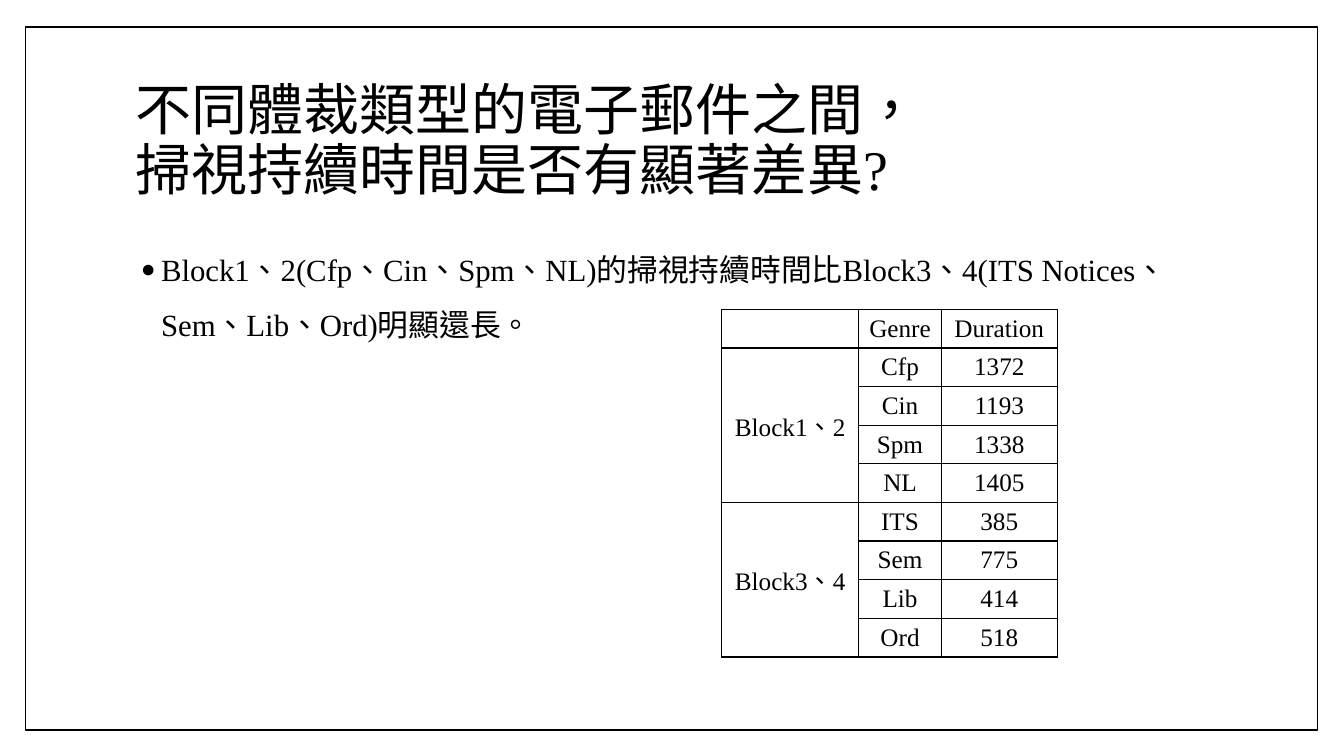
from lxml.etree import SubElement
from pptx import Presentation
from pptx.dml.color import RGBColor
from pptx.enum.lang import MSO_LANGUAGE_ID
from pptx.enum.shapes import MSO_SHAPE
from pptx.enum.text import MSO_ANCHOR, PP_ALIGN
from pptx.oxml.ns import qn
from pptx.util import Pt

FONT = "Times New Roman"
BLACK = "000000"
WHITE = "FFFFFF"
BLOCKS = {
    "Block1、2": [("Cfp", 1372), ("Cin", 1193), ("Spm", 1338), ("NL", 1405)],
    "Block3、4": [("ITS", 385), ("Sem", 775), ("Lib", 414), ("Ord", 518)],
}


def color(value):
    return RGBColor.from_string(value)


def write_text(frame, text, size, align=PP_ALIGN.LEFT, line_spacing=1.0, space_before=0):
    frame.word_wrap = True
    paragraph = frame.paragraphs[0]
    paragraph.text = text
    paragraph.alignment = align
    paragraph.line_spacing = line_spacing
    paragraph.space_before = Pt(space_before)
    for run in paragraph.runs:
        run.font.name = FONT
        run.font.size = Pt(size)
        run.font.color.rgb = color(BLACK)
        run.font.language_id = MSO_LANGUAGE_ID.TRADITIONAL_CHINESE
    return paragraph


def add_bullet(paragraph, character, left, hanging, percent):
    properties = paragraph._p.get_or_add_pPr()
    properties.set("marL", str(Pt(left)))
    properties.set("indent", str(-Pt(hanging)))
    bullet_color = SubElement(properties, qn("a:buClr"))
    SubElement(bullet_color, qn("a:srgbClr"), val=BLACK)
    SubElement(properties, qn("a:buSzPct"), val=str(percent * 1000))
    SubElement(properties, qn("a:buFont"), typeface=FONT)
    SubElement(properties, qn("a:buChar"), char=character)


def add_frame(slide, left, top, width, height):
    shape = slide.shapes.add_shape(
        MSO_SHAPE.RECTANGLE, Pt(left), Pt(top), Pt(width), Pt(height)
    )
    shape.shadow.inherit = False
    shape.fill.solid()
    shape.fill.fore_color.rgb = color(WHITE)
    shape.line.color.rgb = color(BLACK)
    shape.line.width = Pt(1)


def add_title(slide, left, top, width, height):
    box = slide.shapes.add_textbox(Pt(left), Pt(top), Pt(width), Pt(height))
    box.text_frame.vertical_anchor = MSO_ANCHOR.MIDDLE
    title = "不同體裁類型的電子郵件之間，\v掃視持續時間是否有顯著差異?"
    write_text(box.text_frame, title, size=40, line_spacing=0.9)


def add_finding(slide, left, top, width, height):
    box = slide.shapes.add_textbox(Pt(left), Pt(top), Pt(width), Pt(height))
    finding = (
        "Block1、2(Cfp、Cin、Spm、NL)的掃視持續時間比"
        "Block3、4(ITS Notices、Sem、Lib、Ord)明顯還長。"
    )
    paragraph = write_text(
        box.text_frame, finding, size=22, line_spacing=1.5, space_before=14
    )
    add_bullet(paragraph, "●", left=18, hanging=14.4, percent=80)


def format_cell(cell):
    cell.vertical_anchor = MSO_ANCHOR.MIDDLE
    cell.margin_top = cell.margin_bottom = Pt(3)
    properties = cell._tc.get_or_add_tcPr()
    for side in ("a:lnL", "a:lnR", "a:lnT", "a:lnB"):
        border = SubElement(properties, qn(side), w=str(Pt(1)))
        fill = SubElement(border, qn("a:solidFill"))
        SubElement(fill, qn("a:srgbClr"), val=BLACK)
    cell.fill.background()


def add_duration_table(slide, left, top, column_widths, row_height):
    rows = [("", "Genre", "Duration")]
    spans = []
    for block, entries in BLOCKS.items():
        spans.append((len(rows), len(rows) + len(entries) - 1))
        for index, (genre, duration) in enumerate(entries):
            rows.append((block if index == 0 else "", genre, str(duration)))

    table = slide.shapes.add_table(
        len(rows), len(column_widths), Pt(left), Pt(top),
        Pt(sum(column_widths)), Pt(row_height * len(rows)),
    ).table
    table.first_row = False
    table.horz_banding = False
    for column, width in zip(table.columns, column_widths):
        column.width = Pt(width)
    for row_index, values in enumerate(rows):
        table.rows[row_index].height = Pt(row_height)
        for column_index, value in enumerate(values):
            cell = table.cell(row_index, column_index)
            format_cell(cell)
            write_text(cell.text_frame, value, size=18, align=PP_ALIGN.CENTER)
    for first, last in spans:
        table.cell(first, 0).merge(table.cell(last, 0))


def main():
    presentation = Presentation()
    presentation.slide_width = Pt(960)
    presentation.slide_height = Pt(540)
    slide = presentation.slides.add_slide(presentation.slide_layouts[6])
    add_frame(slide, 18, 19.4, 923, 502)
    add_title(slide, 90, 48.2, 777.6, 106.6)
    add_finding(slide, 90, 162, 777.6, 318.2)
    add_duration_table(slide, 515.5, 221, (97.9, 59, 82.8), 27.15)
    presentation.save("out.pptx")


if __name__ == "__main__":
    main()
